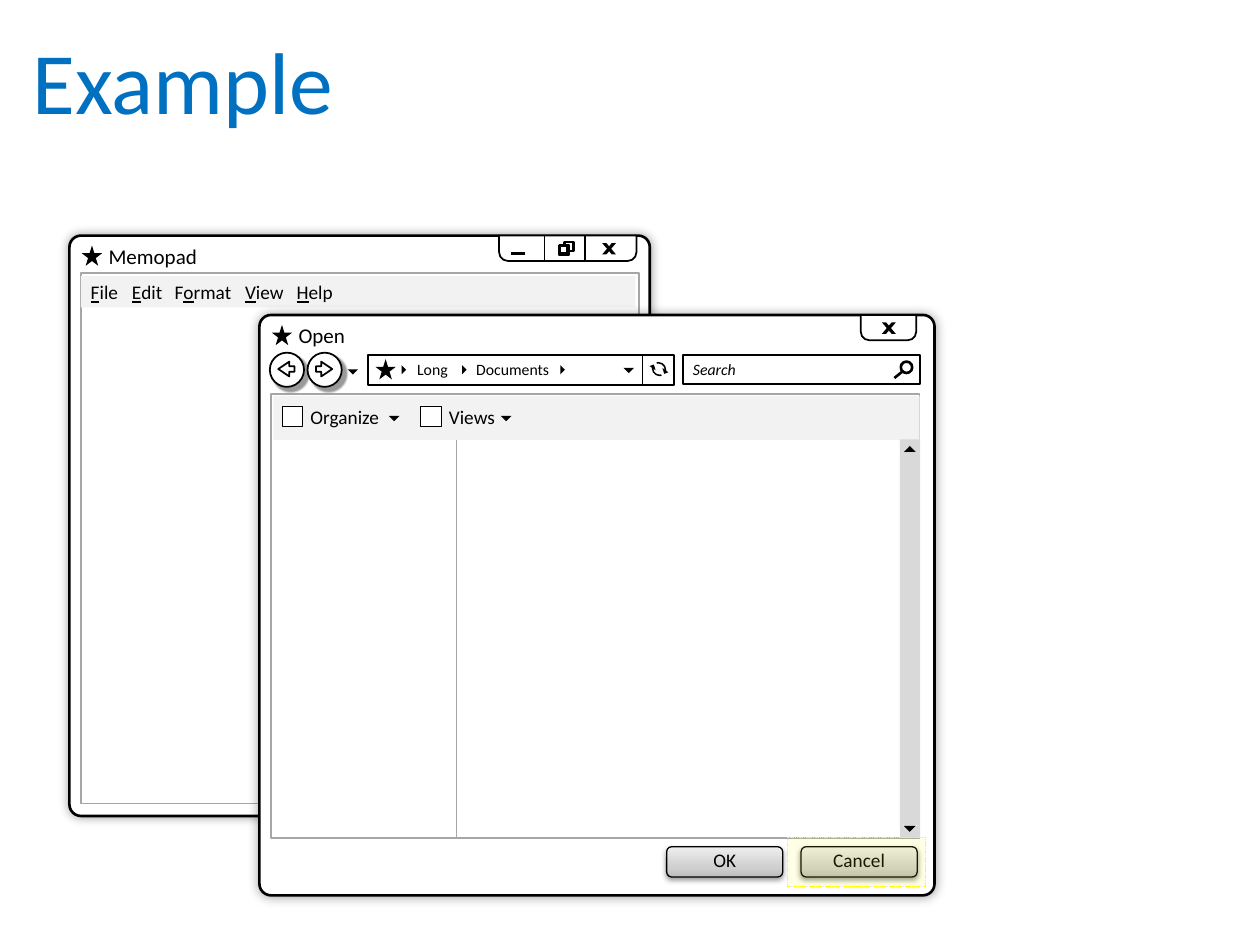
from copy import deepcopy

from lxml.etree import SubElement
from pptx import Presentation
from pptx.dml.color import RGBColor
from pptx.enum.dml import MSO_LINE
from pptx.enum.shapes import MSO_CONNECTOR, MSO_SHAPE
from pptx.enum.text import MSO_ANCHOR, PP_ALIGN
from pptx.oxml.ns import qn
from pptx.util import Cm, Pt

BLACK, WHITE, GREY, PALE = "000000", "FFFFFF", "A6A6A6", "F2F2F2"
WINDOW_SHADOW = (37, 6, 0, 0)
ROUND_SHADOW = (40, 1, 3, 45)
BUTTON_SHADOW = (38, 3.1, 1.6, 90)


def color(hex_code):
    return RGBColor.from_string(hex_code)


def add_shadow(item, opacity, blur, distance, angle):
    effects = item._element.spPr.find(qn("a:effectLst"))
    outer = SubElement(effects, qn("a:outerShdw"), blurRad=str(Pt(blur)),
                       dist=str(Pt(distance)), dir=str(angle * 60000),
                       algn="ctr", rotWithShape="0")
    tint = SubElement(outer, qn("a:srgbClr"), val=BLACK)
    SubElement(tint, qn("a:alpha"), val=str(opacity * 1000))


def draw(slide, kind, left, top, width, height, fill=WHITE, line=None, weight=1,
         rotation=0, flip=None, adjust=(), shadow=None):
    item = slide.shapes.add_shape(kind, Cm(left), Cm(top), Cm(width), Cm(height))
    item.shadow.inherit = False
    item.fill.solid()
    item.fill.fore_color.rgb = color(fill)
    if line:
        item.line.color.rgb = color(line)
        item.line.width = Pt(weight)
    else:
        item.line.fill.background()
    item.rotation = rotation
    if flip:
        item._element.spPr.xfrm.set(flip, "1")
    for index, value in enumerate(adjust):
        item.adjustments[index] = value
    if shadow:
        add_shadow(item, *shadow)
    return item


def draw_line(slide, x1, y1, x2, y2, weight=0.75, line=BLACK):
    stroke = slide.shapes.add_connector(MSO_CONNECTOR.STRAIGHT, Cm(x1), Cm(y1), Cm(x2), Cm(y2))
    stroke.line.color.rgb = color(line)
    stroke.line.width = Pt(weight)
    SubElement(stroke._element.spPr, qn("a:effectLst"))


def write(holder, text, size=11, ink=BLACK, italic=False, align=PP_ALIGN.LEFT,
          anchor=MSO_ANCHOR.TOP, insets=(0, 0.1, 0, 0.1), tabs=()):
    frame = holder.text_frame
    frame.word_wrap = True
    frame.vertical_anchor = anchor
    frame.margin_left, frame.margin_top, frame.margin_right, frame.margin_bottom = map(Cm, insets)
    paragraph = frame.paragraphs[0]
    paragraph.alignment = align
    if tabs:
        stops = SubElement(paragraph._p.get_or_add_pPr(), qn("a:tabLst"))
        for position in tabs:
            SubElement(stops, qn("a:tab"), pos=str(Cm(position)), algn="l")
    plain, *marked = text.split("_")
    pieces = [(plain, False)]
    for part in marked:
        pieces += [(part[0], True), (part[1:], False)]
    for words, underline in pieces:
        if words:
            run = paragraph.add_run()
            run.text = words
            run.font.name = "Calibri"
            run.font.size = Pt(size)
            run.font.color.rgb = color(ink)
            run.font.italic = italic
            run.font.underline = underline


def label(slide, text, left, top, width, height, **text_format):
    box = slide.shapes.add_textbox(Cm(left), Cm(top), Cm(width), Cm(height))
    write(box, text, **text_format)


def star(slide, left, top):
    draw(slide, MSO_SHAPE.STAR_5_POINT, left, top, 0.41, 0.41, BLACK)


def drop_arrow(slide, left, top):
    draw(slide, MSO_SHAPE.RIGHT_TRIANGLE, left, top, 0.15, 0.15, BLACK, rotation=315)


def close_mark(slide, left, top):
    for flip in (None, "flipH"):
        draw(slide, MSO_SHAPE.PARALLELOGRAM, left, top, 0.28, 0.23, BLACK,
             flip=flip, adjust=[0.851])


def window(slide, title, left, top, width, controls_left, controls_width):
    draw(slide, MSO_SHAPE.ROUNDED_RECTANGLE, left, top, width, 11.7, line=BLACK, weight=1.5,
         adjust=[0.02], shadow=WINDOW_SHADOW)
    draw(slide, MSO_SHAPE.ROUND_2_SAME_RECTANGLE, controls_left, top, controls_width, 0.51,
         line=BLACK, rotation=180, adjust=[0.344, 0])
    star(slide, left + 0.25, top + 0.2)
    label(slide, title, left + 0.54, top + 0.03, 7.95, 0.76, size=12,
          insets=(0.25, 0.13, 0.25, 0.13))


def editor_window(slide):
    window(slide, "Memopad", 1.4, 4.75, 11.7, 10.06, 2.77)
    for x in (10.97, 11.79):
        draw_line(slide, x, 5.27, x, 4.75)
    draw(slide, MSO_SHAPE.RECTANGLE, 11.38, 4.88, 0.18, 0.18, line=BLACK, weight=1.5)
    draw(slide, MSO_SHAPE.RECTANGLE, 11.28, 4.95, 0.18, 0.18, line=BLACK, weight=2.25)
    close_mark(slide, 12.14, 4.9)
    draw_line(slide, 10.31, 5.11, 10.59, 5.11, 2.25)
    draw(slide, MSO_SHAPE.RECTANGLE, 1.63, 5.51, 11.25, 10.69, line=GREY)
    draw(slide, MSO_SHAPE.RECTANGLE, 1.63, 5.56, 11.18, 0.64, PALE)
    label(slide, "_File\t_Edit\tF_ormat\t_View\t_Help", 1.83, 5.56, 10.69, 0.66,
          tabs=(0.83, 1.69, 3.11, 4.15))


def navigation(slide):
    for left, flip in ((5.44, None), (6.2, "flipH")):
        draw(slide, MSO_SHAPE.OVAL, left, 7.11, 0.69, 0.69, line=BLACK, shadow=ROUND_SHADOW)
        draw(slide, MSO_SHAPE.LEFT_ARROW, left + 0.17, 7.29, 0.33, 0.3, line=BLACK,
             flip=flip, adjust=[0.354, 0.749])
    drop_arrow(slide, 7.04, 7.37)


def address_bar(slide):
    draw(slide, MSO_SHAPE.RECTANGLE, 7.42, 7.16, 6.17, 0.61, line=BLACK)
    star(slide, 7.57, 7.24)
    for left in (8.03, 9.25, 11.23):
        draw(slide, MSO_SHAPE.RIGHT_TRIANGLE, left, 7.39, 0.13, 0.13, BLACK,
             rotation=315, flip="flipH")
    label(slide, "Long", 8.41, 7.16, 0.99, 0.58, size=9)
    label(slide, "Documents", 9.6, 7.16, 2.59, 0.58, size=9)
    drop_arrow(slide, 12.6, 7.34)
    draw_line(slide, 12.95, 7.16, 12.95, 7.75)
    for left, top, rotation in ((13.08, 7.21, 210), (13.06, 7.24, 31.3)):
        draw(slide, MSO_SHAPE.CIRCULAR_ARROW, left, top, 0.43, 0.43, BLACK, rotation=rotation,
             adjust=[0.073, 19.32, 199.281, 134.68, 0.174])


def search_box(slide):
    draw(slide, MSO_SHAPE.RECTANGLE, 13.77, 7.16, 4.78, 0.58, line=BLACK)
    label(slide, "Search", 13.97, 7.16, 2.59, 0.58, size=9, italic=True)
    draw(slide, MSO_SHAPE.OVAL, 18.16, 7.29, 0.23, 0.23, line=BLACK, weight=1.5)
    draw_line(slide, 18.19, 7.49, 18.03, 7.62, 1.5)


def toolbar(slide):
    draw(slide, MSO_SHAPE.RECTANGLE, 5.51, 7.98, 13.03, 0.89, PALE)
    for name, left, arrow_left in (("Organize", 5.69, 7.87), ("Views", 8.48, 10.13)):
        draw(slide, MSO_SHAPE.RECTANGLE, left, 8.18, 0.41, 0.41, line=BLACK, weight=0.25)
        label(slide, name, left + 0.57, 8.08, 1.6, 0.66)
        drop_arrow(slide, arrow_left, 8.31)


def push_button(slide, text, left):
    button = draw(slide, MSO_SHAPE.ROUNDED_RECTANGLE, left, 17.07, 2.34, 0.61, line=BLACK,
                  weight=0.75, shadow=BUTTON_SHADOW)
    button.fill.gradient()
    button.fill.gradient_angle = 90
    stop_list = button._element.spPr.find(qn("a:gradFill")).find(qn("a:gsLst"))
    stop_list.append(deepcopy(stop_list[-1]))
    shades = ((0, "BDBDBD"), (0.35, "D1D1D1"), (1, "EEEEEE"))
    for stop, (position, shade) in zip(button.fill.gradient_stops, shades):
        stop.position = position
        stop.color.rgb = color(shade)
    write(button, text, align=PP_ALIGN.CENTER, anchor=MSO_ANCHOR.MIDDLE,
          insets=(0.25, 0, 0.25, 0.1))


def scroll_bar(slide):
    draw(slide, MSO_SHAPE.RECTANGLE, 18.14, 8.86, 0.41, 8.03, "D9D9D9")
    for top, rotation, flip in ((9.02, 135, None), (16.54, 225, "flipV")):
        draw(slide, MSO_SHAPE.RIGHT_TRIANGLE, 18.24, top, 0.2, 0.2, BLACK, line=WHITE,
             weight=0.25, rotation=rotation, flip=flip)


def highlight(slide, left, top, width, height):
    marker = draw(slide, MSO_SHAPE.RECTANGLE, left, top, width, height, "FFFF00",
                  line="FFFF00", weight=0.25)
    marker.line.dash_style = MSO_LINE.SQUARE_DOT
    tint = marker._element.spPr.find(qn("a:solidFill"))[0]
    SubElement(tint, qn("a:alpha"), val="10000")


def open_dialog(slide):
    window(slide, "Open", 5.23, 6.35, 13.61, 17.35, 1.12)
    close_mark(slide, 17.78, 6.5)
    draw(slide, MSO_SHAPE.RECTANGLE, 5.46, 7.95, 13.08, 8.94, line=GREY)
    navigation(slide)
    address_bar(slide)
    search_box(slide)
    toolbar(slide)
    push_button(slide, "OK", 13.44)
    push_button(slide, "Cancel", 16.15)
    scroll_bar(slide)
    draw_line(slide, 9.19, 8.86, 9.19, 16.89, 0.25, GREY)
    highlight(slide, 15.88, 16.87, 2.77, 0.99)


def main():
    deck = Presentation()
    deck.slide_width, deck.slide_height = Cm(25.4), Cm(19.05)
    slide = deck.slides.add_slide(deck.slide_layouts[6])
    label(slide, "Example", 0.41, 0.41, 24.61, 2.39, size=50, ink="0070C0",
          insets=(0.25, 0.13, 0.25, 0.13))
    editor_window(slide)
    open_dialog(slide)
    deck.save("out.pptx")


if __name__ == "__main__":
    main()
